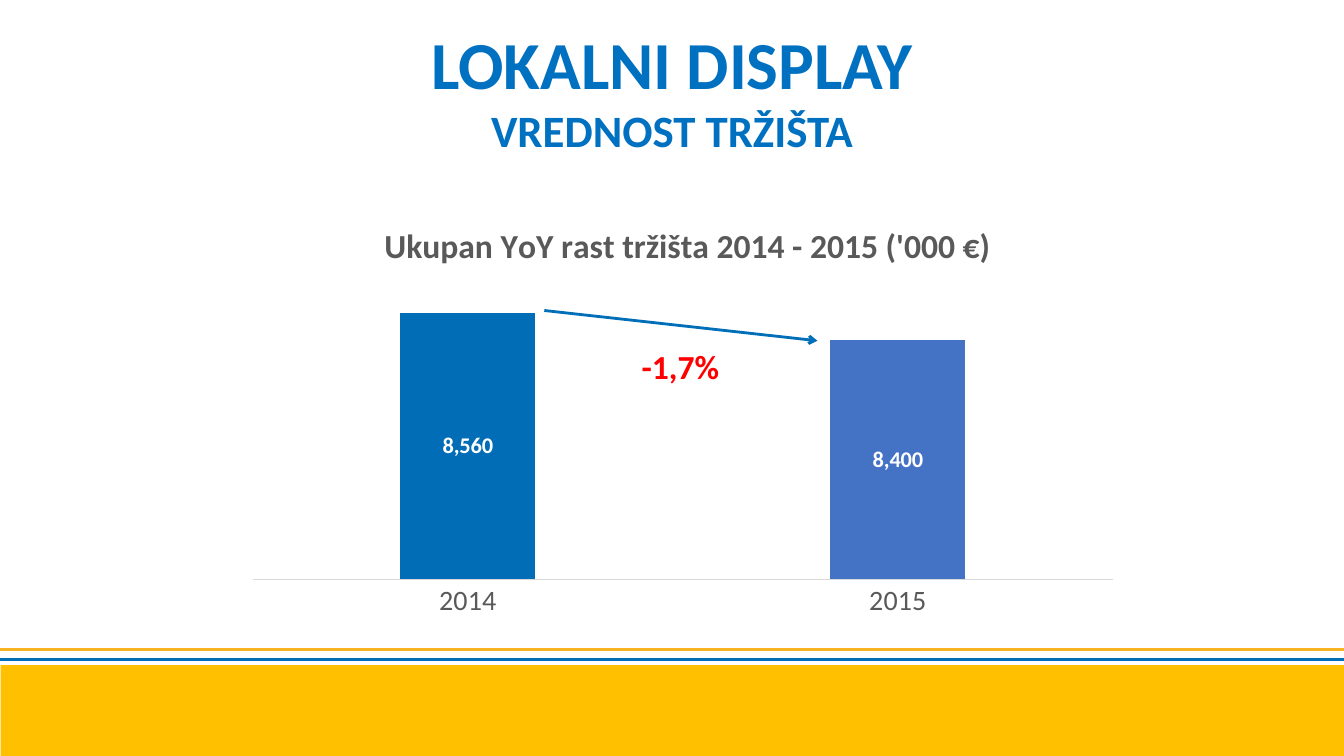
from pptx import Presentation
from pptx.chart.data import CategoryChartData
from pptx.dml.color import RGBColor
from pptx.enum.chart import XL_CHART_TYPE, XL_LABEL_POSITION, XL_TICK_MARK
from pptx.enum.shapes import MSO_CONNECTOR, MSO_SHAPE
from pptx.enum.text import MSO_ANCHOR, PP_ALIGN
from pptx.oxml import parse_xml
from pptx.oxml.ns import nsdecls, qn
from pptx.util import Pt

BLUE = "006FB7"
GREY = "595959"
CHART_TITLE = "Ukupan YoY rast tržišta 2014 - 2015 ('000 €)"


def rgb(value):
    return RGBColor.from_string(value)


def set_font(font, size, color, bold=False):
    values = {"name": "Calibri", "size": Pt(size), "bold": bold}
    for name, value in values.items():
        setattr(font, name, value)
    font.color.rgb = rgb(color)


def add_band(s, box, color):
    sp = s.shapes.add_shape(MSO_SHAPE.RECTANGLE, *map(Pt, box))
    sp.shadow.inherit = False
    sp.fill.solid()
    sp.fill.fore_color.rgb = rgb(color)
    sp.line.fill.background()


def add_line(s, ends, color, width, arrow=False):
    sp = s.shapes.add_connector(MSO_CONNECTOR.STRAIGHT, *map(Pt, ends))
    sp.line.color.rgb = rgb(color)
    sp.line.width = Pt(width)
    if arrow:
        sp.line._get_or_add_ln().append(
            parse_xml(f'<a:tailEnd {nsdecls("a")} type="arrow"/>'))
    sp._element.spPr.append(parse_xml(f'<a:effectLst {nsdecls("a")}/>'))


def add_text(s, box, lines, color, anchor=MSO_ANCHOR.TOP):
    """Add centred bold lines, each given as (text, size)."""
    tf = s.shapes.add_textbox(*map(Pt, box)).text_frame
    values = {"word_wrap": True, "vertical_anchor": anchor, "margin_left": 0,
              "margin_right": 0}
    if anchor == MSO_ANCHOR.MIDDLE:
        values |= {"margin_top": 0, "margin_bottom": 0}
    for name, value in values.items():
        setattr(tf, name, value)
    for i, (text, size) in enumerate(lines):
        p = tf.add_paragraph() if i else tf.paragraphs[0]
        p.alignment = PP_ALIGN.CENTER
        r = p.add_run()
        r.text = text
        set_font(r.font, size, color, True)


def set_layout(parent, after, inner=False, **fractions):
    """Place a chart part by fractions of the chart's size."""
    for old in parent.findall(qn("c:layout")):
        parent.remove(old)
    target = '<c:layoutTarget val="inner"/>' if inner else ""
    modes = '<c:xMode val="edge"/><c:yMode val="edge"/>'
    sizes = "".join(f'<c:{k} val="{v}"/>' for k, v in fractions.items())
    layout = parse_xml(f'<c:layout {nsdecls("c")}><c:manualLayout>{target}'
                       f'{modes}{sizes}</c:manualLayout></c:layout>')
    if after is None:
        parent.insert(0, layout)
    else:
        after.addnext(layout)


def add_market_chart(s, box):
    data = CategoryChartData(number_format="#,##0")
    data.categories = ["2014", "2015"]
    data.add_series(CHART_TITLE, (8560, 8400))
    chart = s.shapes.add_chart(
        XL_CHART_TYPE.COLUMN_CLUSTERED, *map(Pt, box), data).chart
    set_font(chart.font, 10, "000000")
    chart.has_legend = False

    chart.has_title = True
    tf = chart.chart_title.text_frame
    tf.text = CHART_TITLE
    set_font(tf.paragraphs[0].runs[0].font, 24, GREY, True)
    title = chart.chart_title._element
    set_layout(title, title.find(qn("c:tx")), x=0.16, y=0.04)

    values = chart.value_axis
    values.minimum_scale, values.maximum_scale = 7000, 8800
    values.has_major_gridlines = False
    values.visible = False
    years = chart.category_axis
    years.major_tick_mark = XL_TICK_MARK.NONE
    set_font(years.tick_labels.font, 20, GREY)
    years.format.line.color.rgb = rgb("D9D9D9")
    years.format.line.width = Pt(0.75)

    plot = chart.plots[0]
    plot.gap_width, plot.overlap, plot.vary_by_categories = 219, -27, False
    bars = plot.series[0]
    for part, color in ((bars, "4472C4"), (bars.points[0], "016DB7")):
        part.format.fill.solid()
        part.format.fill.fore_color.rgb = rgb(color)
    labels = bars.data_labels
    labels.show_value = True
    labels.position = XL_LABEL_POSITION.CENTER
    set_font(labels.font, 16, "FFFFFF", True)
    area = chart._chartSpace.chart.plotArea
    set_layout(area, None, inner=True, x=0.02, y=0.17, w=0.96, h=0.72)


def main():
    prs = Presentation()
    prs.slide_width, prs.slide_height = Pt(960), Pt(540)
    s = prs.slides.add_slide(prs.slide_layouts[6])
    add_band(s, (0.5, 475, 959.5, 65), "FFC000")
    for y, color in ((464, "F8B322"), (471, BLUE)):
        add_line(s, (0, y, 960, y), color, 2.2)
    add_market_chart(s, (167.8, 142.6, 640, 304.6))
    add_line(s, (388.8, 221.8, 583.9, 243.4), BLUE, 2, arrow=True)
    add_text(s, (434.9, 243.4, 102.2, 30.2), [("-1,7%", 24)], "FF0000")
    add_text(s, (87.8, 21.6, 784.8, 84.2),
             [("LOKALNI DISPLAY", 48), ("VREDNOST TRŽIŠTA", 32)],
             "0070C0", MSO_ANCHOR.MIDDLE)
    prs.save("out.pptx")


if __name__ == "__main__":
    main()
